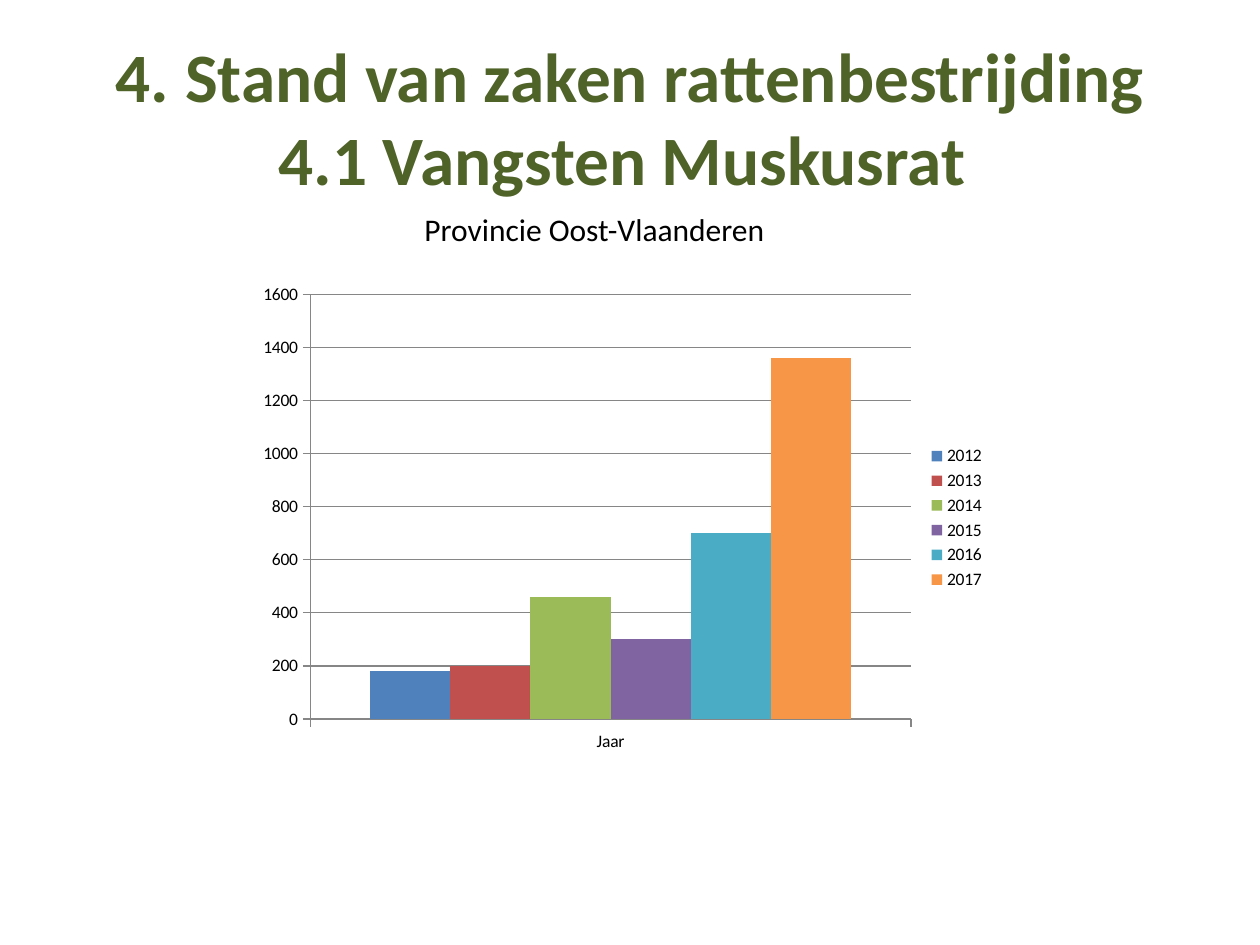
"""Build a slide with the yearly muskrat catches in Oost-Vlaanderen."""
from pptx import Presentation
from pptx.chart import data
from pptx.dml.color import RGBColor
from pptx.enum import chart as charts, text
from pptx.util import Inches, Pt

COLORS = {
    "title": "4F6228", "text": "000000", "line": "868686",
    "2012": "4F81BD", "2013": "C0504D", "2014": "9BBB59",
    "2015": "8064A2", "2016": "4BACC6", "2017": "F79646",
}
CATCHES = {"2012": 180, "2013": 200, "2014": 460,
           "2015": 300, "2016": 700, "2017": 1360}


def set_font(font, size, color, bold=False):
    font.name, font.size, font.bold = "Calibri", Pt(size), bold
    font.color.rgb = RGBColor.from_string(COLORS[color])


def add_text(page, place, words, size, color, bold, align, anchor):
    box = page.shapes.add_textbox(*map(Inches, place))
    frame = box.text_frame
    frame.word_wrap = True
    frame.vertical_anchor = anchor
    para = frame.paragraphs[0]
    para.text = words
    para.alignment = align
    set_font(para.font, size, color, bold)


deck = Presentation()
deck.slide_width, deck.slide_height = Inches(10), Inches(7.5)
page = deck.slides.add_slide(deck.slide_layouts[6])

add_text(page, (0.5, 0.3, 9, 1.25),
         "4. Stand van zaken rattenbestrijding 4.1 Vangsten Muskusrat ",
         39.6, "title", True, text.PP_ALIGN.CENTER, text.MSO_ANCHOR.MIDDLE)
add_text(page, (3.27, 1.62, 3.15, 0.4), "Provincie Oost-Vlaanderen",
         18, "text", False, text.PP_ALIGN.LEFT, text.MSO_ANCHOR.TOP)

catch_data = data.CategoryChartData()
catch_data.categories = ["Jaar"]
for year, catch in CATCHES.items():
    catch_data.add_series(year, [catch])
chart = page.shapes.add_chart(
    charts.XL_CHART_TYPE.COLUMN_CLUSTERED,
    Inches(1.97), Inches(2.18), Inches(5.95), Inches(3.86), catch_data).chart
chart.has_title = False
set_font(chart.font, 10, "text")
chart.has_legend = True
chart.legend.position = charts.XL_LEGEND_POSITION.RIGHT
chart.legend.include_in_layout = False

plot = chart.plots[0]
plot.gap_width, plot.overlap = 150, 0
plot.vary_by_categories = False
for series in plot.series:
    series.format.fill.solid()
    series.format.fill.fore_color.rgb = RGBColor.from_string(COLORS[series.name])

chart.value_axis.minimum_scale = 0
chart.value_axis.maximum_scale = 1600
chart.value_axis.major_unit = 200
chart.value_axis.has_major_gridlines = True
for axis in (chart.category_axis, chart.value_axis):
    axis.major_tick_mark = charts.XL_TICK_MARK.OUTSIDE
for ruled in (chart.category_axis, chart.value_axis, chart.value_axis.major_gridlines):
    ruled.format.line.color.rgb = RGBColor.from_string(COLORS["line"])
    ruled.format.line.width = Pt(0.75)

deck.save("out.pptx")
